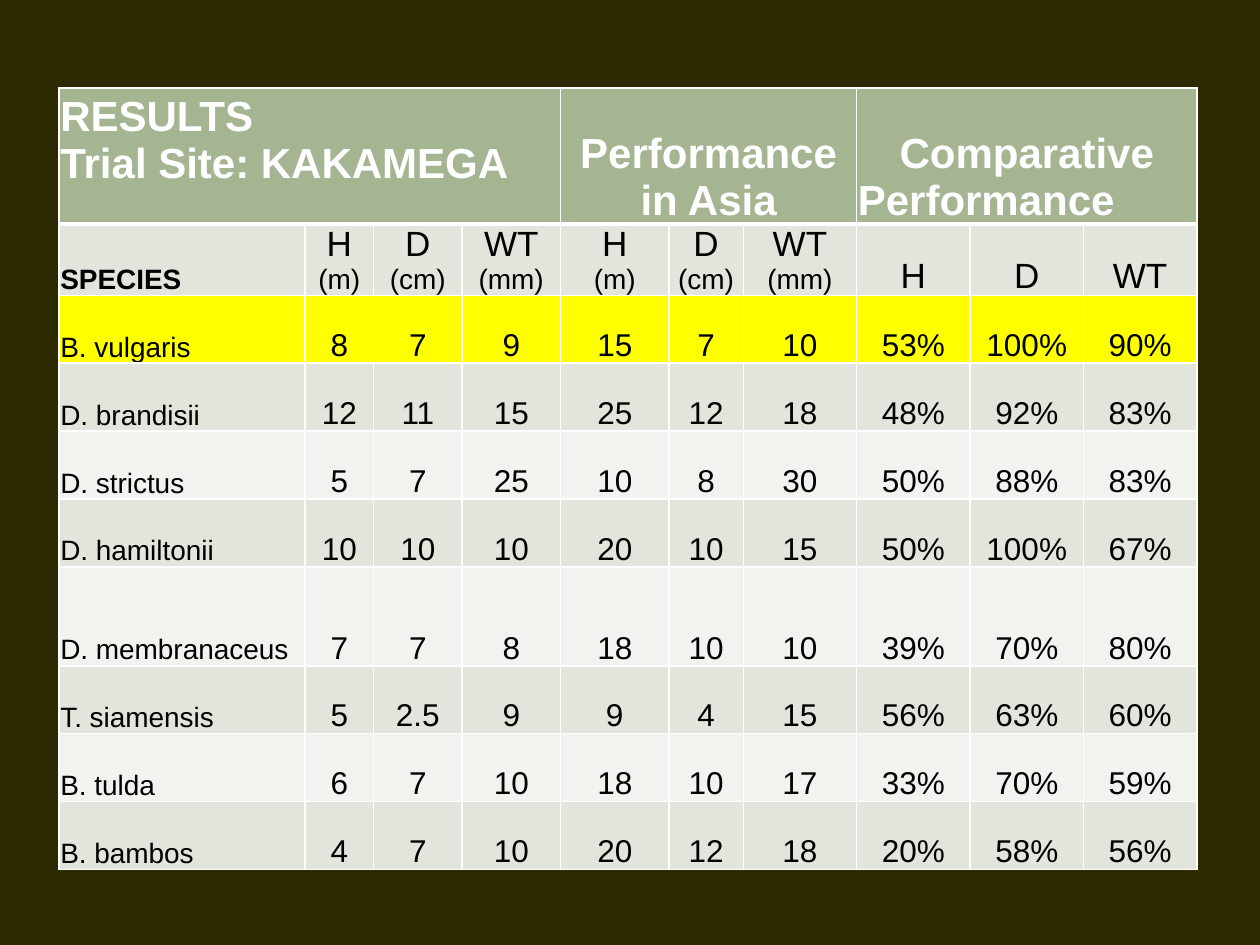
from pptx import Presentation, util as u
from pptx.dml.color import RGBColor
from pptx.enum import text
from pptx.oxml import parse_xml
from pptx.oxml.ns import nsdecls

Pt = u.Pt
LEFT, CENTER = text.PP_ALIGN.LEFT, text.PP_ALIGN.CENTER

# Content
# Group headings: first column, column count, lines with alignment, bottom inset
GROUPS = [
    (0, 4, [("RESULTS", LEFT), ("Trial Site: KAKAMEGA", LEFT)], 21),
    (4, 3, [("Performance", CENTER), ("in Asia", CENTER)], 0),
    (7, 3, [("Comparative", CENTER), ("Performance", LEFT)], 0),
]
MEASURES = [("H", "(m)"), ("D", "(cm)"), ("WT", "(mm)")]
RESULTS = [
    ("B. vulgaris", 8, 7, 9, 15, 7, 10, "53%", "100%", "90%"),
    ("D. brandisii", 12, 11, 15, 25, 12, 18, "48%", "92%", "83%"),
    ("D. strictus", 5, 7, 25, 10, 8, 30, "50%", "88%", "83%"),
    ("D. hamiltonii", 10, 10, 10, 20, 10, 15, "50%", "100%", "67%"),
    ("D. membranaceus", 7, 7, 8, 18, 10, 10, "39%", "70%", "80%"),
    ("T. siamensis", 5, 2.5, 9, 9, 4, 15, "56%", "63%", "60%"),
    ("B. tulda", 6, 7, 10, 18, 10, 17, "33%", "70%", "59%"),
    ("B. bambos", 4, 7, 10, 20, 12, 18, "20%", "58%", "56%"),
]
HIGHLIGHT = "B. vulgaris"
TALL = "D. membranaceus"

THEME = {
    "font": "Arial", "background": "2D2901", "heading": "A5B592",
    "bands": ("F0F3EE", "E1E5DC"), "highlight": "FFFF00",
    "light": "FFFFFF", "dark": "000000",
    "heading_size": 24, "measure_size": 20, "value_size": 18, "label_size": 16,
}

# Layout, in points
SLIDE_SIZE = (720, 540)
TABLE_LEFT, TABLE_TOP = 33.8, 50.4
COLUMN_WIDTHS = [140.4, 39.4, 50.4, 56.4, 61.9, 42.5, 64.8, 64.8, 64.8, 64.8]
HEADING_HEIGHT, ROW_HEIGHT, TALL_HEIGHT = 77.6, 38.8, 56.6
INSET = 0.7
THIN, THICK = 1, 3


def write(cell, lines, color="dark", bold=False, bottom=0):
    """Fill a cell with (words, size, alignment) lines, one paragraph each."""
    cell.vertical_anchor = text.MSO_ANCHOR.BOTTOM
    cell.margin_left = cell.margin_right = cell.margin_top = Pt(INSET)
    cell.margin_bottom = Pt(bottom)
    frame = cell.text_frame
    for index, (words, size, alignment) in enumerate(lines):
        paragraph = frame.add_paragraph() if index else frame.paragraphs[0]
        paragraph.alignment = alignment
        run = paragraph.add_run()
        run.text = str(words)
        run.font.name = THEME["font"]
        run.font.size = Pt(THEME[size])
        run.font.bold = bold
        run.font.color.rgb = RGBColor.from_string(THEME[color])


def decorate(cell, fill, top=THIN, bottom=THIN):
    """Give a cell its white borders and its background."""
    properties = cell._tc.get_or_add_tcPr()
    for side, width in (("L", THIN), ("R", THIN), ("T", top), ("B", bottom)):
        properties.append(parse_xml(
            f'<a:ln{side} {nsdecls("a")} w="{Pt(width)}"><a:solidFill>'
            f'<a:srgbClr val="{THEME["light"]}"/></a:solidFill></a:ln{side}>'))
    cell.fill.solid()
    cell.fill.fore_color.rgb = RGBColor.from_string(fill)


def row_fill(row):
    if row == 0:
        return THEME["heading"]
    if row > 1 and RESULTS[row - 2][0] == HIGHLIGHT:
        return THEME["highlight"]
    return THEME["bands"][row % 2]


def main():
    presentation = Presentation()
    presentation.slide_width, presentation.slide_height = map(Pt, SLIDE_SIZE)
    slide = presentation.slides.add_slide(presentation.slide_layouts[6])
    slide.background.fill.solid()
    slide.background.fill.fore_color.rgb = RGBColor.from_string(THEME["background"])

    # Table grid
    heights = [HEADING_HEIGHT, ROW_HEIGHT]
    heights += [TALL_HEIGHT if result[0] == TALL else ROW_HEIGHT for result in RESULTS]
    table = slide.shapes.add_table(
        len(heights), len(COLUMN_WIDTHS), Pt(TABLE_LEFT), Pt(TABLE_TOP),
        Pt(sum(COLUMN_WIDTHS)), Pt(sum(heights))).table
    table.horz_banding = False
    for column, width in zip(table.columns, COLUMN_WIDTHS):
        column.width = Pt(width)
    for index, height in enumerate(heights):
        table.rows[index].height = Pt(height)
        for cell in table.rows[index].cells:
            decorate(cell, row_fill(index),
                     top=THICK if index == 1 else THIN,
                     bottom=THICK if index == 0 else THIN)

    # Group headings, with measures below each
    write(table.cell(1, 0), [("SPECIES", "label_size", LEFT)], bold=True)
    for first, count, lines, bottom in GROUPS:
        heading = table.cell(0, first)
        heading.merge(table.cell(0, first + count - 1))
        write(heading, [(words, "heading_size", alignment) for words, alignment in lines],
              color="light", bold=True, bottom=bottom)
        with_units = (first, count) != GROUPS[-1][:2]
        for offset, (measure, unit) in enumerate(MEASURES, first + count - len(MEASURES)):
            parts = [(measure, "measure_size", CENTER)]
            if with_units:
                parts.append((unit, "label_size", CENTER))
            write(table.cell(1, offset), parts)

    # Results by species
    for row, (species, *values) in enumerate(RESULTS, 2):
        write(table.cell(row, 0), [(species, "label_size", LEFT)])
        for column, value in enumerate(values, 1):
            write(table.cell(row, column), [(value, "value_size", CENTER)])

    presentation.save("out.pptx")


if __name__ == "__main__":
    main()
